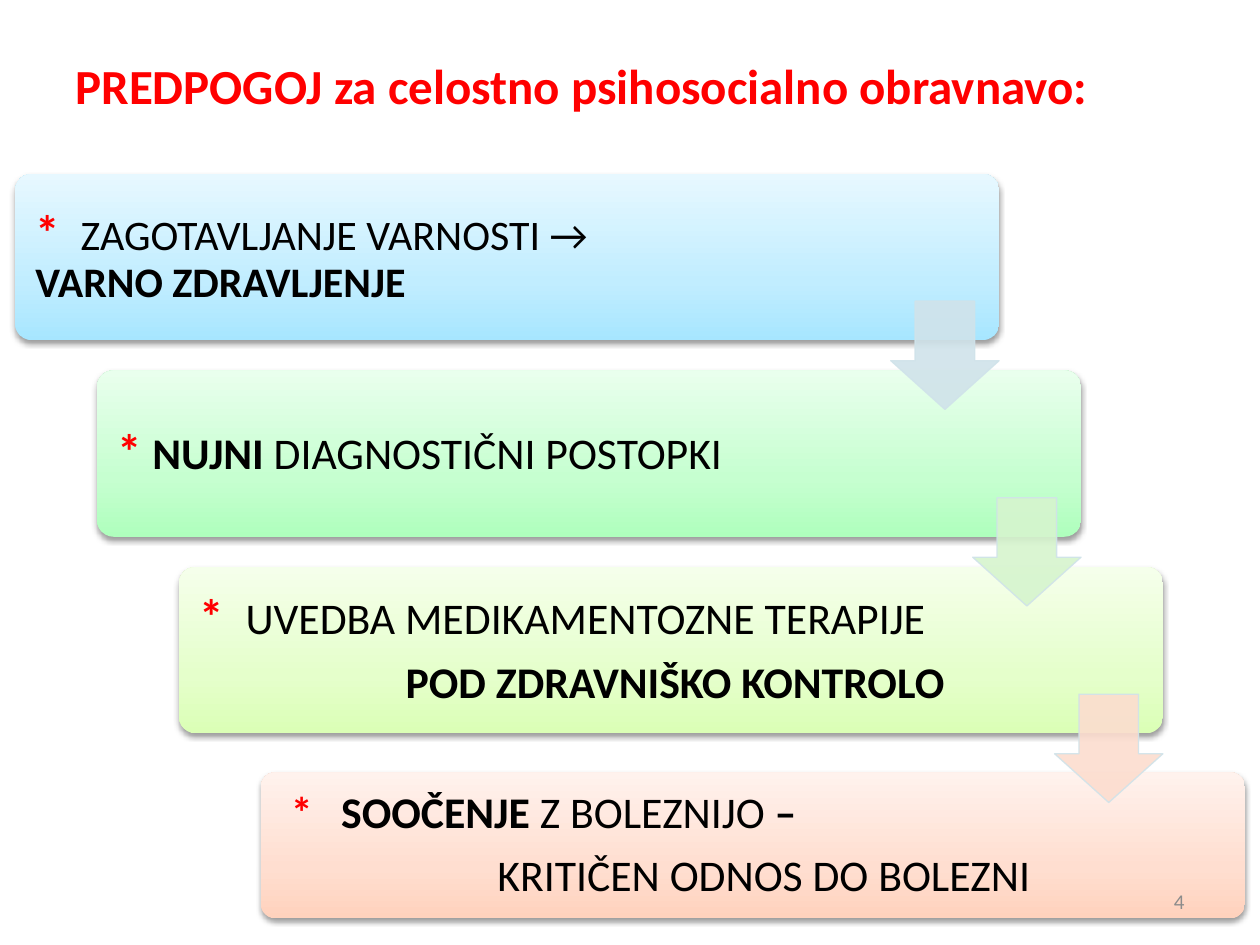
from copy import deepcopy
from dataclasses import dataclass
from typing import NamedTuple

from lxml.etree import SubElement
from pptx import Presentation
from pptx.dml.color import RGBColor
from pptx.enum.shapes import MSO_SHAPE as Shape
from pptx.enum.text import MSO_ANCHOR as Anchor, PP_ALIGN as Align
from pptx.oxml import parse_xml
from pptx.oxml.ns import nsdecls, qn
from pptx.util import Inches, Pt

FONT = "Calibri"
RED = RGBColor(0xFF, 0x00, 0x00)
BLACK = RGBColor(0x00, 0x00, 0x00)
GRAY = RGBColor(0x8C, 0x8C, 0x8C)
ARROW_LINE = RGBColor(0xD0, 0xE3, 0xEA)
BLUES = (RGBColor(0xA7, 0xE6, 0xFF), RGBColor(0xC1, 0xED, 0xFF), RGBColor(0xE7, 0xF8, 0xFF))
GREENS = (RGBColor(0xAF, 0xFF, 0xBD), RGBColor(0xC6, 0xFF, 0xD0), RGBColor(0xE9, 0xFF, 0xED))
LIMES = (RGBColor(0xDB, 0xFF, 0xB6), RGBColor(0xE5, 0xFF, 0xCB), RGBColor(0xF5, 0xFF, 0xEB))
PEACHES = (RGBColor(0xFF, 0xD2, 0xBD), RGBColor(0xFF, 0xDE, 0xD0), RGBColor(0xFF, 0xF2, 0xED))
ARROW_BLUE = RGBColor(0xD0, 0xE3, 0xEA)
ARROW_GREEN = RGBColor(0xD6, 0xF4, 0xCE)
ARROW_PEACH = RGBColor(0xFC, 0xDD, 0xCF)

FIRST_LEFT, FIRST_TOP = 0.12, 1.38
STEP_X, STEP_Y = 0.65, 1.56
CARD_WIDTH = 7.81
STOP_POSITIONS = (0, 0.35, 1)


class Span(NamedTuple):
    text: str
    bold: bool = False
    color: RGBColor = BLACK
    size: float = 25


class Line(NamedTuple):
    spans: tuple[Span, ...]
    margin: float = 0
    indent: float = 0
    space_after: float = 9


@dataclass
class Step:
    lines: tuple[Line, ...]
    gradient: tuple[RGBColor, ...]
    arrow_color: RGBColor | None = None
    top_shift: float = 0
    height: float = 1.32
    text_width: float = 6.23
    inset: float = 0.12


def star(size: float = 28) -> Span:
    return Span("*\t", True, RED, size)


STEPS = (
    Step(
        (
            Line((star(), Span("ZAGOTAVLJANJE VARNOSTI →", size=24)), 0.36, -0.36, 0),
            Line((Span("VARNO ZDRAVLJENJE", True, size=24),)),
        ),
        BLUES, ARROW_BLUE, text_width=6.28,
    ),
    Step(
        (Line((star(), Span("NUJNI ", True), Span("DIAGNOSTIČNI POSTOPKI")), 0.28, -0.28),),
        GREENS, ARROW_GREEN,
    ),
    Step(
        (
            Line((star(), Span("UVEDBA MEDIKAMENTOZNE TERAPIJE")), 0.37, -0.37),
            Line((Span("POD ZDRAVNIŠKO KONTROLO", True),), 1.64),
        ),
        LIMES, ARROW_PEACH,
    ),
    Step(
        (
            Line((star(25), Span("SOOČENJE ", True), Span("Z BOLEZNIJO "), Span("–", True)), 0.5, -0.4),
            Line((Span("KRITIČEN ODNOS DO BOLEZNI"),), 1.74),
        ),
        PEACHES, top_shift=0.07, height=1.16, inset=0.1,
    ),
)


def add_card(slide, step: Step, left: float, top: float) -> None:
    card = slide.shapes.add_shape(
        Shape.ROUNDED_RECTANGLE, Inches(left), Inches(top), Inches(CARD_WIDTH), Inches(step.height)
    )
    card.adjustments[0] = 0.1
    card.line.fill.background()
    card.fill.gradient()
    card.fill.gradient_angle = 90
    properties = card._element.spPr
    stop_list = properties.find(qn("a:gradFill")).find(qn("a:gsLst"))
    stop_list.insert(1, deepcopy(stop_list[0]))
    for stop, position, color in zip(card.fill.gradient_stops, STOP_POSITIONS, step.gradient):
        stop.position = position
        stop.color.rgb = color
    properties.append(parse_xml(
        f'<a:effectLst {nsdecls("a")}><a:outerShdw blurRad="40000" dist="20000" dir="5400000"'
        ' rotWithShape="0"><a:srgbClr val="000000"><a:alpha val="38000"/></a:srgbClr>'
        '</a:outerShdw></a:effectLst>'
    ))


def add_step_text(slide, step: Step, left: float, top: float) -> None:
    box = slide.shapes.add_textbox(
        Inches(left + 0.04), Inches(top + 0.04), Inches(step.text_width), Inches(step.height - 0.08)
    )
    frame = box.text_frame
    frame.word_wrap = True
    frame.vertical_anchor = Anchor.MIDDLE
    frame.margin_left = frame.margin_right = Inches(step.inset)
    frame.margin_top = frame.margin_bottom = Inches(step.inset)
    for index, line in enumerate(step.lines):
        paragraph = frame.add_paragraph() if index else frame.paragraphs[0]
        paragraph.line_spacing = 0.9
        paragraph.space_after = Pt(line.space_after)
        paragraph.font.name = FONT
        layout = paragraph._p.get_or_add_pPr()
        layout.set("marL", str(Inches(line.margin)))
        layout.set("indent", str(Inches(line.indent)))
        for span in line.spans:
            run = paragraph.add_run()
            run.text = span.text
            run.font.name = FONT
            run.font.size = Pt(span.size)
            run.font.bold = span.bold
            run.font.color.rgb = span.color


def add_arrow(slide, color: RGBColor, left: float, top: float) -> None:
    arrow = slide.shapes.add_shape(
        Shape.DOWN_ARROW, Inches(left), Inches(top), Inches(0.86), Inches(0.86)
    )
    arrow.adjustments[0] = 0.55
    arrow.adjustments[1] = 0.45
    arrow.fill.solid()
    arrow.fill.fore_color.rgb = color
    arrow.line.color.rgb = ARROW_LINE
    arrow.line.width = Pt(0.75)
    arrow.shadow.inherit = False
    for tint in arrow._element.spPr.iter(qn("a:srgbClr")):
        SubElement(tint, qn("a:alpha")).set("val", "90000")


def add_title(slide) -> None:
    title = slide.shapes.title
    title.left, title.top = Inches(0.5), Inches(0.36)
    title.width, title.height = Inches(9), Inches(0.63)
    title.text_frame.text = "PREDPOGOJ za celostno psihosocialno obravnavo:"
    title.text_frame.vertical_anchor = Anchor.MIDDLE
    heading = title.text_frame.paragraphs[0]
    heading.alignment = Align.LEFT
    heading.font.name = FONT
    heading.font.size = Pt(28)
    heading.font.bold = True
    heading.font.color.rgb = RED


def add_page_number(slide) -> None:
    box = slide.shapes.add_textbox(Inches(7.17), Inches(6.95), Inches(2.33), Inches(0.4))
    box.text_frame.word_wrap = True
    box.text_frame.vertical_anchor = Anchor.MIDDLE
    number = box.text_frame.paragraphs[0]
    number.text = "4"
    number.alignment = Align.RIGHT
    number.font.name = FONT
    number.font.size = Pt(12)
    number.font.color.rgb = GRAY


def main() -> None:
    deck = Presentation()
    deck.slide_width, deck.slide_height = Inches(10), Inches(7.5)
    slide = deck.slides.add_slide(deck.slide_layouts[5])
    add_title(slide)
    for index, step in enumerate(STEPS):
        left = FIRST_LEFT + index * STEP_X
        top = FIRST_TOP + index * STEP_Y + step.top_shift
        add_card(slide, step, left, top)
        add_step_text(slide, step, left, top)
    for index, step in enumerate(STEPS):
        if step.arrow_color is not None:
            add_arrow(
                slide, step.arrow_color,
                FIRST_LEFT + index * STEP_X + 6.95, FIRST_TOP + index * STEP_Y + 1.01,
            )
    add_page_number(slide)
    deck.save("out.pptx")


if __name__ == "__main__":
    main()
